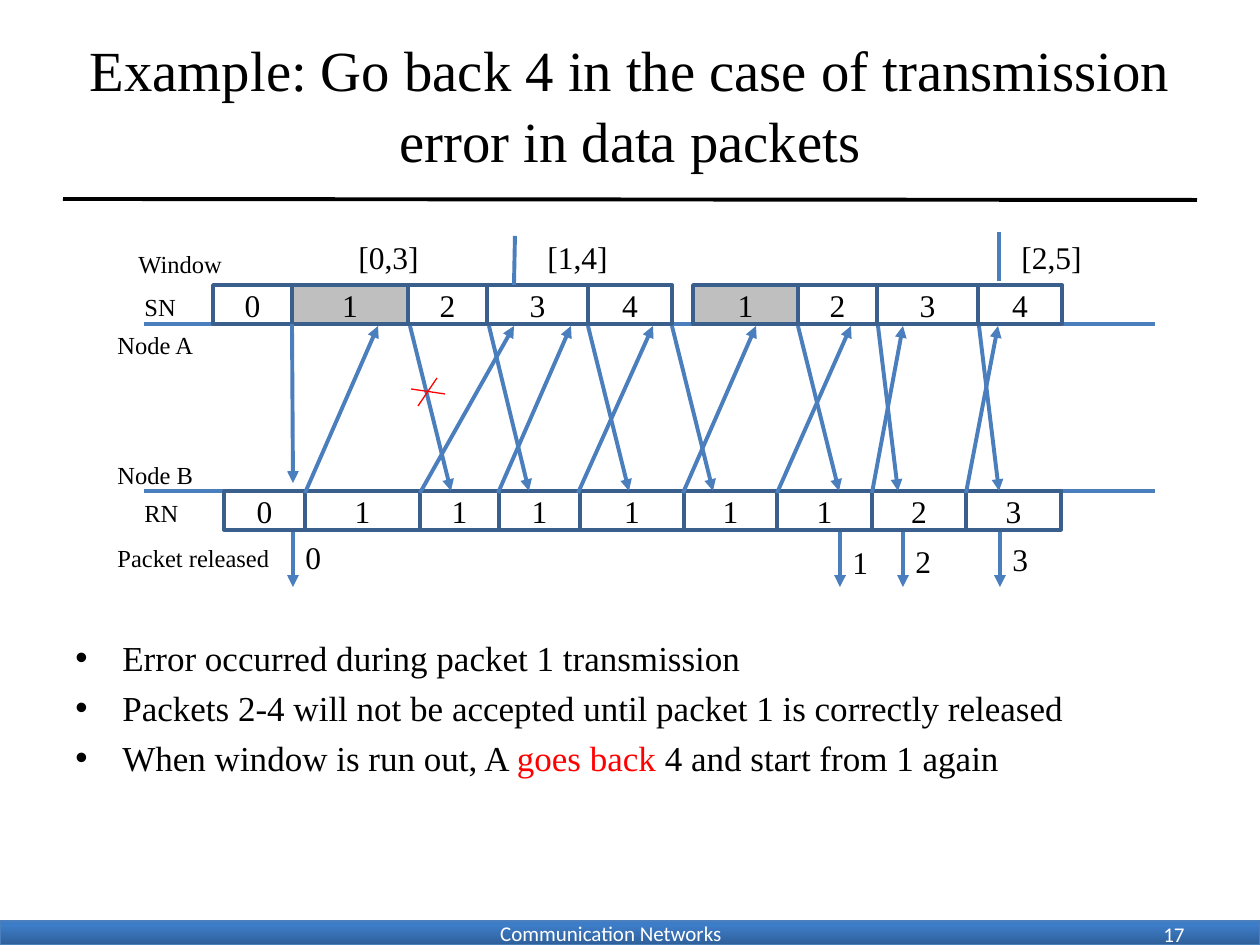
from itertools import pairwise

from pptx import Presentation
from pptx.dml.color import RGBColor
from pptx.enum.shapes import MSO_CONNECTOR, MSO_SHAPE
from pptx.enum.text import MSO_ANCHOR, MSO_AUTO_SIZE, PP_ALIGN
from pptx.oxml.ns import qn
from pptx.oxml.xmlchemy import OxmlElement
from pptx.util import Emu, Pt

SERIF = "Times New Roman"
SANS = "Calibri"
BLACK = "000000"
WHITE = "FFFFFF"
RED = "FF0000"
GREY = "BFBFBF"
BLUE = "4B7EBC"
DARK_BLUE = "3A5F8C"

SENDER_Y = 324
RECEIVER_Y = 491
CELL_HEIGHT = 39

SENDER_ROWS = [
    ([213, 292, 408, 487, 588, 672], "01234"),
    ([693, 798, 877, 978, 1062], "1234"),
]
RECEIVER_EDGES = [224, 305, 420, 499, 580, 684, 777, 872, 966, 1061]
RECEIVER_NUMBERS = "011111123"
PACKETS = [(410, 451), (489, 529), (588, 629), (672, 713), (798, 839), (878, 898), (979, 999)]
REPLIES = [(305, 378), (420, 514), (498, 571), (578, 653),
           (683, 756), (777, 851), (872, 903), (966, 998)]
RELEASES = [(293, 532, "0"), (840, 537, "1"), (903, 536, "2"), (1000, 534, "3")]
ROW_LABELS = [
    ("Window", 126, 243, 110),
    ("SN", 132, 286, 57),
    ("Node A", 105, 324, 102),
    ("Node B", 105, 454, 102),
    ("RN", 132, 492, 60),
    ("Packet released", 105, 537, 183),
]
WINDOWS = [("[0,3]", 346), ("[1,4]", 535), ("[2,5]", 1009)]
BULLETS = [
    [("Error occurred during packet 1 transmission", BLACK)],
    [("Packets 2-4 will not be accepted until packet 1 is correctly released", BLACK)],
    [("When window is run out, A ", BLACK), ("goes back ", RED),
     ("4 and start from 1 again", BLACK)],
]


def px(length):
    return Emu(round(length * 914400 / 126))


def box(left, top, width, height):
    return px(left), px(top), px(width), px(height)


def color(value):
    return RGBColor.from_string(value)


def format_run(run, size, font=SERIF, value=BLACK):
    run.font.size = Pt(size)
    run.font.name = font
    run.font.color.rgb = color(value)


def write(shape, text, size, align=PP_ALIGN.LEFT, font=SERIF, value=BLACK):
    shape.text_frame.text = text
    paragraph = shape.text_frame.paragraphs[0]
    paragraph.alignment = align
    format_run(paragraph.runs[0], size, font, value)


def add_label(slide, text, area, size, wrap=False, **style):
    label = slide.shapes.add_textbox(*box(*area))
    label.text_frame.word_wrap = wrap
    write(label, text, size, **style)


def add_line(slide, start, end, value=BLUE, width=2.25, arrow=False):
    points = [px(length) for length in (*start, *end)]
    line = slide.shapes.add_connector(MSO_CONNECTOR.STRAIGHT, *points)
    line.line.color.rgb = color(value)
    line.line.width = Pt(width)
    properties = line.element.spPr
    if arrow:
        tail = OxmlElement("a:tailEnd")
        tail.set("type", "triangle")
        properties.find(qn("a:ln")).append(tail)
    properties.append(OxmlElement("a:effectLst"))


def add_rectangle(slide, area, line_color, line_width):
    shape = slide.shapes.add_shape(MSO_SHAPE.RECTANGLE, *box(*area))
    shape.shadow.inherit = False
    shape.line.color.rgb = color(line_color)
    shape.line.width = Pt(line_width)
    return shape


def add_cells(slide, top, edges, numbers, shaded=""):
    for (left, right), number in zip(pairwise(edges), numbers):
        cell = add_rectangle(slide, (left, top, right - left, CELL_HEIGHT), DARK_BLUE, 2)
        cell.fill.solid()
        cell.fill.fore_color.rgb = color(GREY if number in shaded else WHITE)
        cell.text_frame.vertical_anchor = MSO_ANCHOR.MIDDLE
        write(cell, number, 18, PP_ALIGN.CENTER)


def add_title(slide):
    title = slide.shapes.title
    title.left, title.top, title.width, title.height = box(63, 38, 1134, 130)
    title.text_frame.auto_size = MSO_AUTO_SIZE.NONE
    title.text_frame.vertical_anchor = MSO_ANCHOR.MIDDLE
    write(title, "Example: Go back 4 in the case of transmission error in data packets",
          32.4, PP_ALIGN.CENTER)
    title.text_frame.paragraphs[0].line_spacing = 1.04
    add_line(slide, (63, 199), (1197, 200), BLACK)


def add_footer(slide):
    bar = add_rectangle(slide, (0, 921, 1260, 24), BLUE, 0.75)
    bar.fill.gradient()
    bar.fill.gradient_angle = 90
    for stop, position, value in zip(bar.fill.gradient_stops, (0, 0.8), ("2F5F99", "3D7CC7")):
        stop.position = position
        stop.color.rgb = color(value)
    add_label(slide, "Communication Networks", (466, 914, 290, 38), 12, True,
              align=PP_ALIGN.CENTER, font=SANS, value=WHITE)
    add_label(slide, "17", (903, 915, 294, 25), 12, True,
              align=PP_ALIGN.RIGHT, font=SANS, value=WHITE)


def add_bullets(slide):
    frame = slide.shapes.add_textbox(*box(63, 630, 1134, 179)).text_frame
    frame.word_wrap = True
    for index, parts in enumerate(BULLETS):
        paragraph = frame.add_paragraph() if index else frame.paragraphs[0]
        paragraph.space_before = Pt(4.8)
        for text, value in parts:
            run = paragraph.add_run()
            run.text = text
            format_run(run, 20, value=value)
        properties = paragraph._p.get_or_add_pPr()
        properties.set("marL", str(px(47)))
        properties.set("indent", str(-px(47)))
        bullet_font = OxmlElement("a:buFont")
        bullet_font.set("typeface", "Arial")
        bullet = OxmlElement("a:buChar")
        bullet.set("char", "•")
        properties.extend([bullet_font, bullet])


def add_timeline(slide):
    for y in (SENDER_Y, RECEIVER_Y):
        add_line(slide, (144, y), (1155, y))
    for edges, numbers in SENDER_ROWS:
        add_cells(slide, SENDER_Y - CELL_HEIGHT, edges, numbers, shaded="1")
    add_cells(slide, RECEIVER_Y, RECEIVER_EDGES, RECEIVER_NUMBERS)
    for text, left, top, width in ROW_LABELS:
        add_label(slide, text, (left, top, width, 43), 14)
    for text, left in WINDOWS:
        add_label(slide, text, (left, 232, 87, 50), 18)
    add_line(slide, (515, 236), (514, 285))
    add_line(slide, (999, 232), (999, 281))


def add_messages(slide):
    add_line(slide, (292, SENDER_Y), (293, 483), arrow=True)
    for start, end in PACKETS:
        add_line(slide, (start, SENDER_Y + 2), (end, RECEIVER_Y), arrow=True)
    for start, end in REPLIES:
        add_line(slide, (start, RECEIVER_Y + 2), (end, SENDER_Y + 2), arrow=True)
    for x, top, number in RELEASES:
        add_line(slide, (x, 532), (x, 587), arrow=True)
        add_label(slide, number, (x, top, 41, 50), 18)
    add_line(slide, (437, 378), (418, 406), RED, 0.75)
    add_line(slide, (445, 394), (411, 389), RED, 0.75)


def main():
    presentation = Presentation()
    presentation.slide_width = px(1260)
    presentation.slide_height = px(945)
    slide = presentation.slides.add_slide(presentation.slide_layouts[5])
    add_footer(slide)
    add_title(slide)
    add_bullets(slide)
    add_timeline(slide)
    add_messages(slide)
    presentation.save("out.pptx")


if __name__ == "__main__":
    main()
